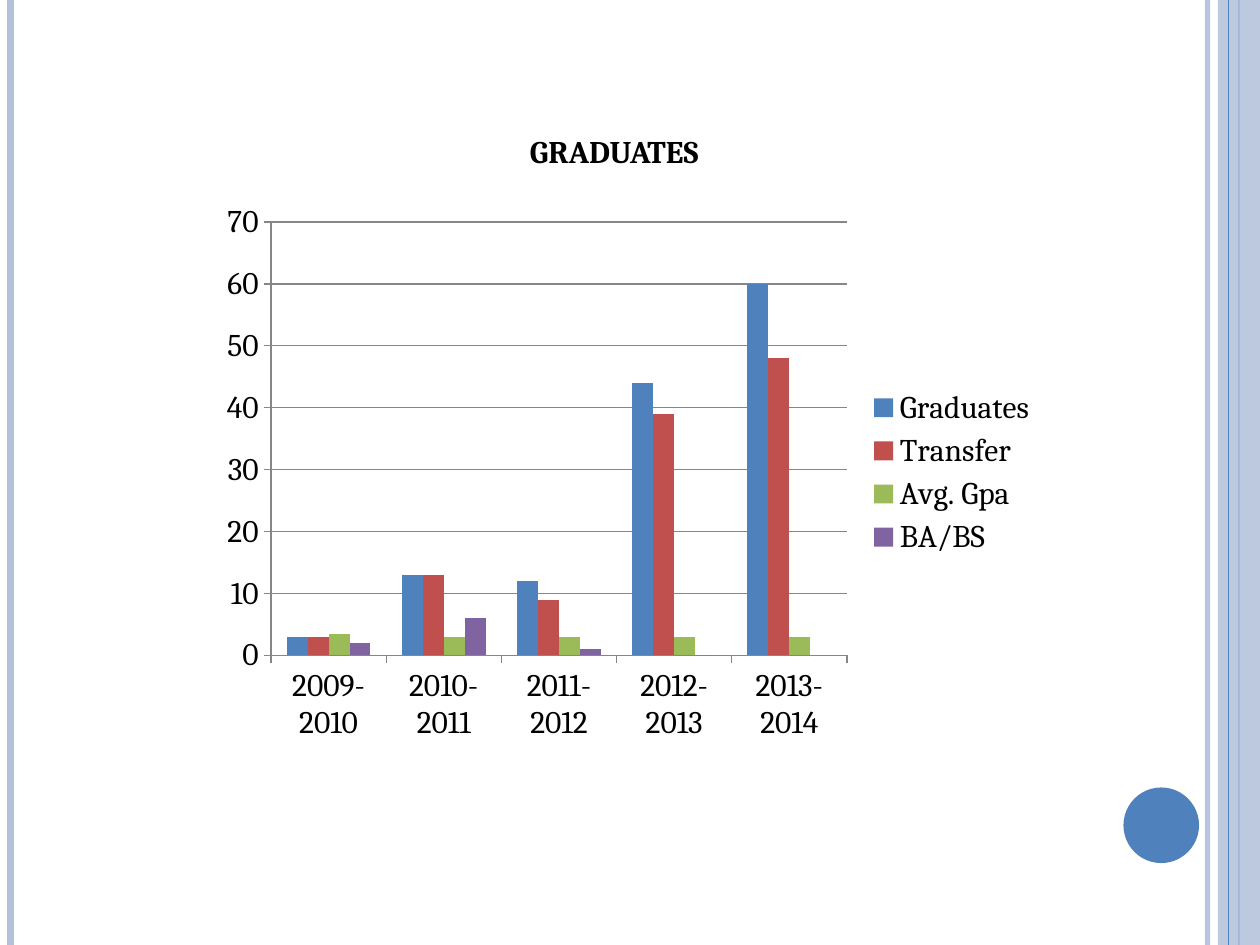
from lxml import etree
from pptx import Presentation
from pptx.chart.data import CategoryChartData
from pptx.dml.color import RGBColor
from pptx.enum.chart import XL_CHART_TYPE, XL_LEGEND_POSITION, XL_TICK_MARK
from pptx.enum.shapes import MSO_CONNECTOR, MSO_SHAPE
from pptx.enum.text import MSO_ANCHOR, MSO_AUTO_SIZE, PP_ALIGN
from pptx.oxml.ns import qn
from pptx.util import Pt

COLUMNS = XL_CHART_TYPE.COLUMN_CLUSTERED
LEGEND_RIGHT = XL_LEGEND_POSITION.RIGHT
TICK_OUT, TICK_NONE = XL_TICK_MARK.OUTSIDE, XL_TICK_MARK.NONE
STRAIGHT = MSO_CONNECTOR.STRAIGHT
RECTANGLE, OVAL = MSO_SHAPE.RECTANGLE, MSO_SHAPE.OVAL
TOP, CENTER = MSO_ANCHOR.TOP, PP_ALIGN.CENTER
FIT_SHAPE = MSO_AUTO_SIZE.SHAPE_TO_FIT_TEXT

FONT = "Cambria"
BLACK = RGBColor(0x00, 0x00, 0x00)
GRAY = RGBColor(0x86, 0x86, 0x86)
PALE_BLUE = RGBColor(0xB3, 0xC1, 0xDB)
BLUE = RGBColor(0x4F, 0x81, 0xBD)
RED = RGBColor(0xC0, 0x50, 0x4D)
GREEN = RGBColor(0x9B, 0xBB, 0x59)
PURPLE = RGBColor(0x80, 0x64, 0xA2)

SLIDE_WIDTH, SLIDE_HEIGHT = 720, 540
YEARS = ["2009-2010", "2010-2011", "2011-2012", "2012-2013", "2013-2014"]
SERIES = [
    ("Graduates", [3, 13, 12, 44, 60], BLUE),
    ("Transfer", [3, 13, 9, 39, 48], RED),
    ("Avg. Gpa", [3.5, 3, 3, 3, 3], GREEN),
    ("BA/BS", [2, 6, 1, 0, None], PURPLE),
]


def set_opacity(shape, percent):
    color = next(shape._element.spPr.iter(qn("a:srgbClr")))
    etree.SubElement(color, qn("a:alpha"), val=str(percent * 1000))


def set_font(font, bold=False):
    font.name, font.size, font.bold = FONT, Pt(18), bold
    font.color.rgb = BLACK


def add_rule(slide, x, top, height, color, weight):
    rule = slide.shapes.add_connector(STRAIGHT, Pt(x), Pt(top), Pt(x), Pt(top + height))
    rule.line.color.rgb = color
    rule.line.width = Pt(weight)
    etree.SubElement(rule._element.spPr, qn("a:effectLst"))
    return rule


def add_solid(slide, kind, left, top, width, height, color):
    solid = slide.shapes.add_shape(kind, Pt(left), Pt(top), Pt(width), Pt(height))
    solid.shadow.inherit = False
    solid.fill.solid()
    solid.fill.fore_color.rgb = color
    solid.line.fill.background()
    return solid


def add_frame(slide, left, top, width, height):
    right = left + width
    # Rules beside the band and at the left edge
    inner_rule = add_rule(slide, right - 30, top, height, PALE_BLUE, 3)
    set_opacity(inner_rule, 93)
    add_rule(slide, left + 6, top, height, PALE_BLUE, 4.5)
    # Translucent band between two blue rules
    add_rule(slide, right - 12, top, height, BLUE, 1.5)
    band = add_solid(slide, RECTANGLE, right - 24, top, 24, height, PALE_BLUE)
    set_opacity(band, 87)
    add_rule(slide, right - 18, top, height, BLUE, 0.75)
    # Page marker
    add_solid(slide, OVAL, right - 78, top + height - 90, 43.2, 43.2, BLUE)


def place_title(slide, left, top, width, height):
    title = slide.shapes.title
    title.left, title.top = Pt(left), Pt(top)
    title.width, title.height = Pt(width), Pt(height)
    frame = title.text_frame
    frame.text = "GRADUATES"
    frame.word_wrap = True
    frame.auto_size = FIT_SHAPE
    frame.vertical_anchor = TOP
    heading = frame.paragraphs[0]
    heading.alignment = CENTER
    set_font(heading.runs[0].font, bold=True)


def add_graduates_chart(slide, left, top, width, height):
    data = CategoryChartData()
    data.categories = YEARS
    for name, values, _ in SERIES:
        data.add_series(name, values)
    chart = slide.shapes.add_chart(
        COLUMNS, Pt(left), Pt(top), Pt(width), Pt(height), data).chart
    chart.has_title = False
    set_font(chart.font)

    # Legend
    chart.has_legend = True
    chart.legend.position = LEGEND_RIGHT
    chart.legend.include_in_layout = False

    # Axes and gridlines
    counts = chart.value_axis
    counts.minimum_scale, counts.maximum_scale, counts.major_unit = 0, 70, 10
    counts.has_major_gridlines = True
    for axis in (chart.category_axis, counts):
        axis.major_tick_mark, axis.minor_tick_mark = TICK_OUT, TICK_NONE
    for part in (chart.category_axis, counts, counts.major_gridlines):
        part.format.line.color.rgb = GRAY
        part.format.line.width = Pt(0.75)

    # Columns
    plot = chart.plots[0]
    plot.vary_by_categories = False
    plot.gap_width, plot.overlap = 150, 0
    for columns, (_, _, color) in zip(plot.series, SERIES):
        columns.format.fill.solid()
        columns.format.fill.fore_color.rgb = color


def main():
    deck = Presentation()
    deck.slide_width, deck.slide_height = Pt(SLIDE_WIDTH), Pt(SLIDE_HEIGHT)
    slide = deck.slides.add_slide(deck.slide_layouts.get_by_name("Title Only"))
    add_frame(slide, 0, 0, SLIDE_WIDTH, SLIDE_HEIGHT)
    place_title(slide, 66, 72, 570, 29)
    add_graduates_chart(slide, 120, 110, 480, 320)
    deck.save("out.pptx")


if __name__ == "__main__":
    main()
